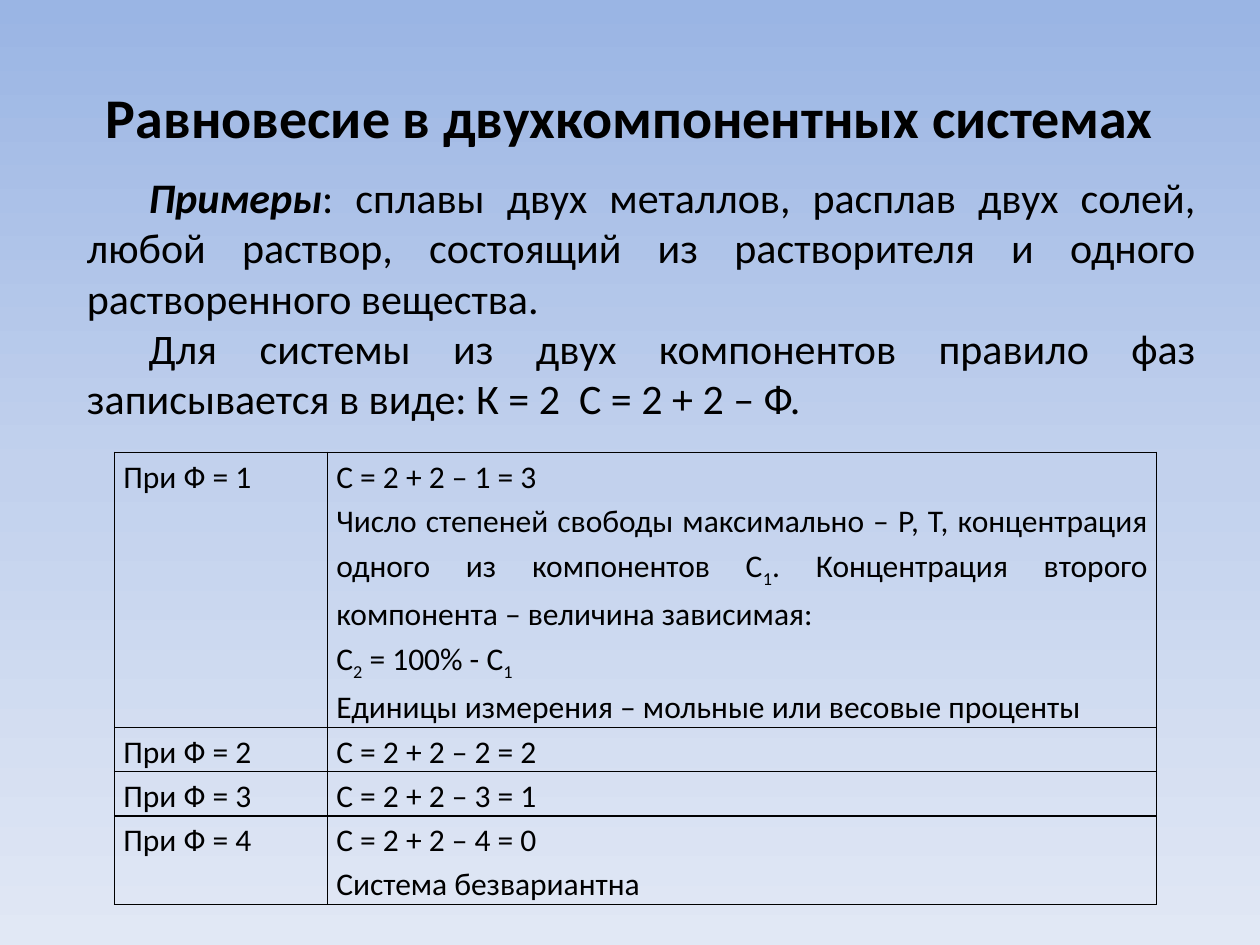
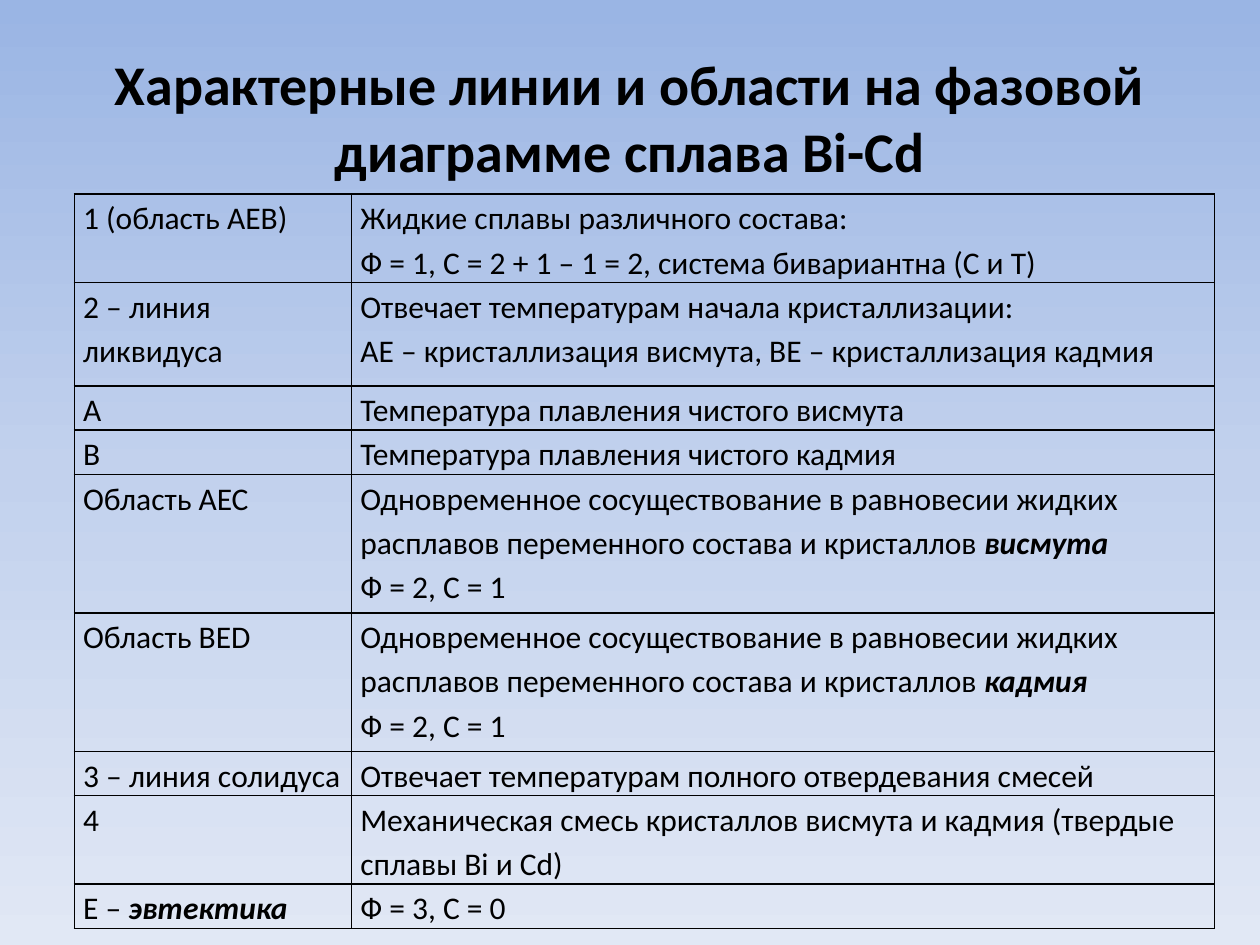
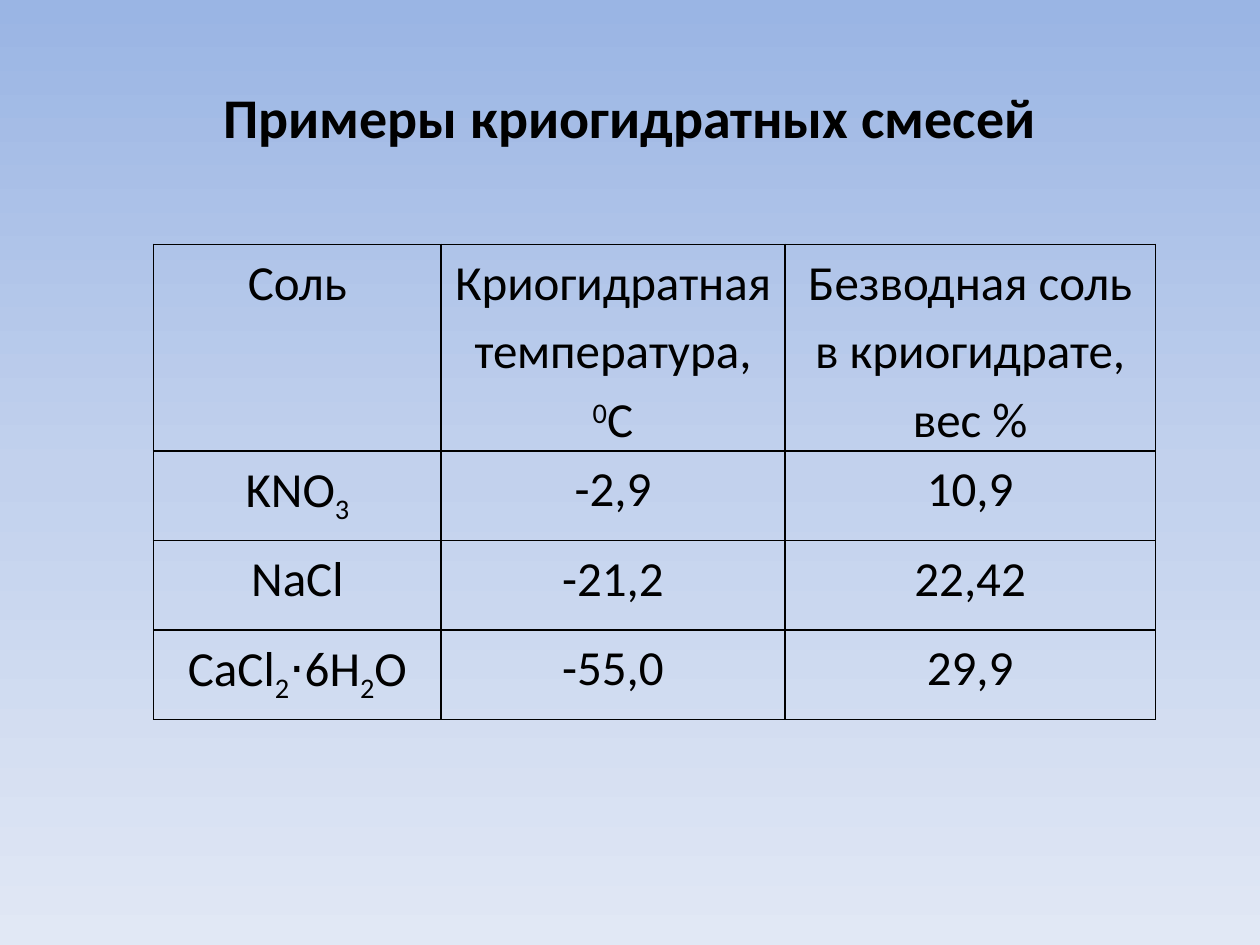
from lxml import etree
from pptx import Presentation
from pptx.dml.color import RGBColor
from pptx.enum.text import MSO_AUTO_SIZE, PP_ALIGN
from pptx.oxml import parse_xml
from pptx.oxml.ns import nsdecls, qn
from pptx.util import Inches, Pt

FONT = "Calibri"
BLACK = "000000"
BACKGROUND_STOPS = [(0, "9AB5E4"), (50, "C2D1ED"), (100, "E1E8F5")]
TITLE_SIZE = 32
BODY_SIZE = 24
LINE_SPACING = 1.15
BORDER = (
    '<a:{side} {ns} w="12700"><a:solidFill><a:srgbClr val="{color}"/></a:solidFill></a:{side}>'
)


def write(paragraph, marked_text, size, alignment, bold=False):
    """Fill a paragraph; "|" parts runs, which may start with * (emphasis), _ (sub) or ^ (super)."""
    paragraph.alignment = alignment
    for part in marked_text.split("|"):
        mark = part[0] if part[0] in "*_^" else ""
        run = paragraph.add_run()
        run.text = part[len(mark):]
        run.font.name = FONT
        run.font.size = Pt(size)
        run.font.color.rgb = RGBColor.from_string(BLACK)
        run.font.bold = bold or mark == "*"
        run.font.italic = mark == "*"
        if mark in ("_", "^"):
            run.font._element.set("baseline", "-25000" if mark == "_" else "30000")


def add_grid(slide, left, top, widths, heights, rows, size, alignment):
    """Add a table with black borders and no fill; each line of a cell is a paragraph."""
    frame = slide.shapes.add_table(
        len(rows), len(widths), Inches(left), Inches(top),
        Inches(sum(widths)), Inches(sum(heights)),
    )
    table = frame.table
    table.first_row = table.horz_banding = False
    for column, width in zip(table.columns, widths):
        column.width = Inches(width)
    for row, height, texts in zip(table.rows, heights, rows):
        row.height = Inches(height)
        for cell, cell_text in zip(row.cells, texts):
            cell.margin_left = cell.margin_right = Inches(0.07)
            cell.margin_top = cell.margin_bottom = 0
            cell.fill.background()
            properties = cell._tc.get_or_add_tcPr()
            for index, side in enumerate(("lnL", "lnR", "lnT", "lnB")):
                line = BORDER.format(side=side, ns=nsdecls("a"), color=BLACK)
                properties.insert(index, parse_xml(line))
            for index, line in enumerate(cell_text.split("\n")):
                text_frame = cell.text_frame
                paragraph = text_frame.add_paragraph() if index else text_frame.paragraphs[0]
                paragraph.line_spacing = LINE_SPACING
                write(paragraph, line, size, alignment)


presentation = Presentation()
presentation.slide_width = Inches(10)
presentation.slide_height = Inches(7.5)
text_layout = presentation.slide_layouts[1]
title_layout = presentation.slide_layouts[5]

# Shared gradient background
master = presentation.slide_master
background = master.background.fill
background.gradient()
background.gradient_angle = 270
stop_list = master.element.find(".//" + qn("a:gsLst"))
for stop in list(stop_list):
    stop_list.remove(stop)
for position, color in BACKGROUND_STOPS:
    stop = etree.SubElement(stop_list, qn("a:gs"), pos=str(position * 1000))
    etree.SubElement(stop, qn("a:srgbClr"), val=color)

# Slide titles
slides = []
for layout, title in [
    (text_layout, "Равновесие в двухкомпонентных системах"),
    (title_layout, "Характерные линии и области на фазовой диаграмме сплава Bi-Cd"),
    (title_layout, "Примеры криогидратных смесей"),
]:
    slide = presentation.slides.add_slide(layout)
    title_frame = slide.shapes.title.text_frame
    title_frame.auto_size = MSO_AUTO_SIZE.NONE
    write(title_frame.paragraphs[0], title, TITLE_SIZE, PP_ALIGN.CENTER, bold=True)
    slides.append(slide)
equilibrium_slide, diagram_slide, cryohydrate_slide = slides

# Slide 1: phase rule for two components
body = equilibrium_slide.placeholders[1]
body.left, body.top = Inches(0.59), Inches(1.31)
body.width, body.height = Inches(9), Inches(4.95)
body.text_frame.auto_size = MSO_AUTO_SIZE.NONE
for index, body_text in enumerate([
    "*Примеры|: сплавы двух металлов, расплав двух солей, любой раствор, "
    "состоящий из растворителя и одного растворенного вещества.",
    "Для системы из двух компонентов правило фаз записывается в виде: "
    "К = 2  С = 2 + 2 – Ф.",
]):
    paragraph = body.text_frame.add_paragraph() if index else body.text_frame.paragraphs[0]
    paragraph.space_before = Pt(0)
    write(paragraph, body_text, BODY_SIZE, PP_ALIGN.JUSTIFY)
    properties = paragraph._p.get_or_add_pPr()
    properties.set("marL", "0")
    properties.set("indent", str(Inches(0.49)))
    etree.SubElement(properties, qn("a:buNone"))

phase_rows = [
    ("При Ф = 1",
     "С = 2 + 2 – 1 = 3\n"
     "Число степеней свободы максимально – Р, Т, концентрация одного из компонентов С|_1|"
     ". Концентрация второго компонента – величина зависимая:\n"
     "С|_2| = 100% - С|_1\n"
     "Единицы измерения – мольные или весовые проценты"),
    ("При Ф = 2", "С = 2 + 2 – 2 = 2"),
    ("При Ф = 3", "С = 2 + 2 – 3 = 1"),
    ("При Ф = 4", "С = 2 + 2 – 4 = 0\nСистема безвариантна"),
]
add_grid(equilibrium_slide, 0.91, 3.59, [1.69, 6.58], [2.04, 0.34, 0.34, 0.68],
         phase_rows, 18, PP_ALIGN.JUSTIFY)

# Slide 2: lines and regions of the diagram
coexistence = ("Одновременное сосуществование в равновесии жидких расплавов "
               "переменного состава и кристаллов |*{}\nФ = 2, С = 1")
region_rows = [
    ("1 (область АЕВ)",
     "Жидкие сплавы различного состава:\n"
     "Ф = 1, С = 2 + 1 – 1 = 2, система бивариантна (С и Т)"),
    ("2 – линия ликвидуса",
     "Отвечает температурам начала кристаллизации:\n"
     "АЕ – кристаллизация висмута, ВЕ – кристаллизация кадмия"),
    ("А", "Температура плавления чистого висмута"),
    ("В", "Температура плавления чистого кадмия"),
    ("Область АЕС", coexistence.format("висмута")),
    ("Область ВЕD", coexistence.format("кадмия")),
    ("3 – линия солидуса", "Отвечает температурам полного отвердевания смесей"),
    ("4", "Механическая смесь кристаллов висмута и кадмия (твердые сплавы Bi и Cd)"),
    ("Е – |*эвтектика", "Ф = 3, С = 0"),
]
add_grid(diagram_slide, 0.59, 1.54, [2.2, 6.85],
         [0.57, 0.82, 0.28, 0.28, 1.1, 1.1, 0.28, 0.57, 0.28],
         region_rows, 18, PP_ALIGN.LEFT)

# Slide 3: cryohydrate mixtures
salt_rows = [
    ("Соль", "Криогидратная температура, |^0|С", "Безводная соль в криогидрате, вес %"),
    ("KNO|_3", "-2,9", "10,9"),
    ("NaCl", "-21,2", "22,42"),
    ("CaCl|_2|⋅6H|_2|O", "-55,0", "29,9"),
]
add_grid(cryohydrate_slide, 1.22, 1.94, [2.28, 2.73, 2.94], [1.42] + [0.71] * 3,
         salt_rows, 28, PP_ALIGN.CENTER)

presentation.save("out.pptx")
